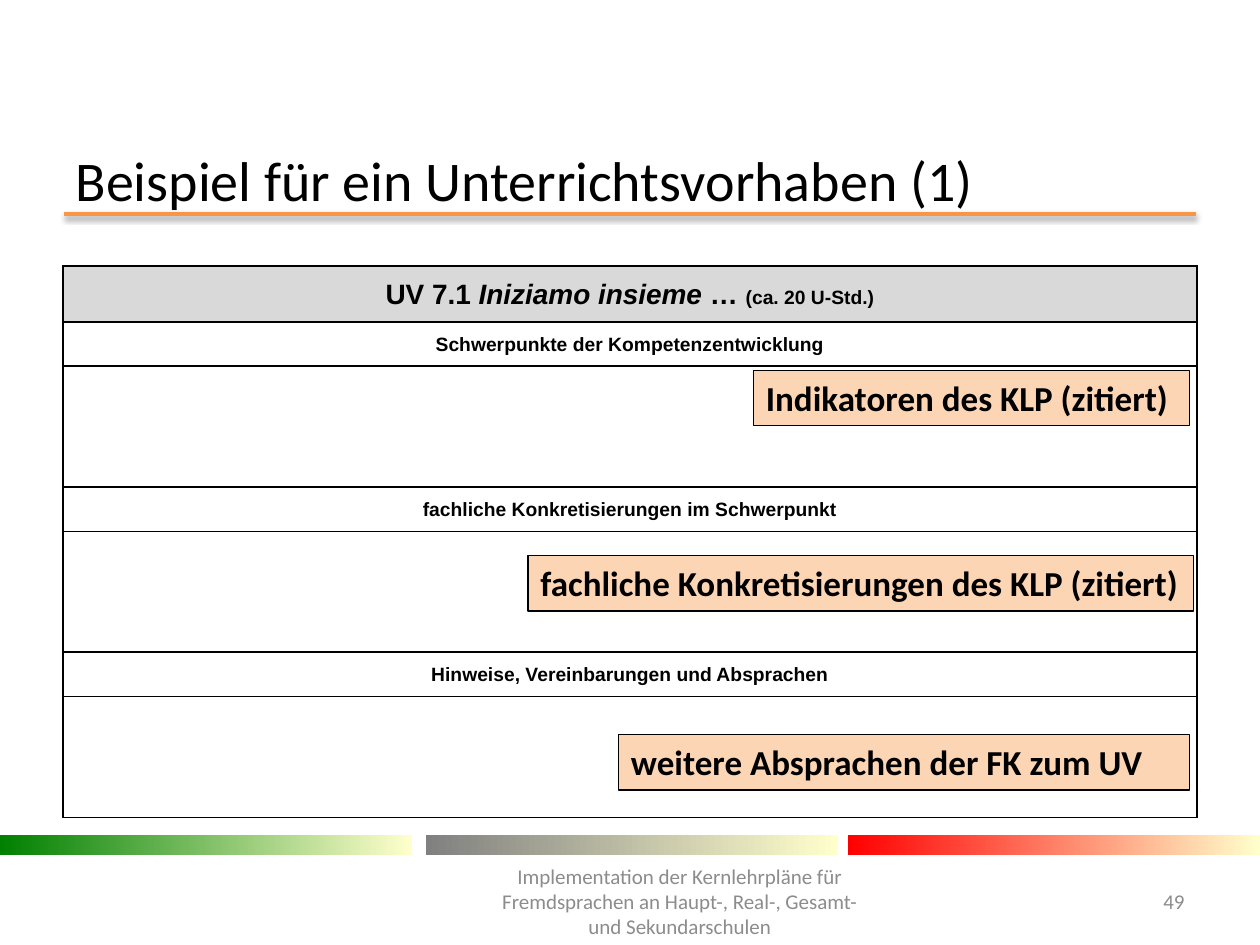
"""Build the slide with the example of a teaching unit."""
from dataclasses import dataclass

from lxml.etree import SubElement
from pptx import Presentation
from pptx.dml.color import RGBColor
from pptx.enum.shapes import MSO_CONNECTOR, MSO_SHAPE
from pptx.enum.text import MSO_ANCHOR, PP_ALIGN
from pptx.oxml import parse_xml
from pptx.oxml.ns import nsdecls, qn
from pptx.util import Inches, Pt


@dataclass(frozen=True)
class Theme:
    heading_font: str = "Calibri"
    table_font: str = "Arial"
    black: str = "000000"
    white: str = "FFFFFF"
    gray: str = "8C8C8C"
    accent: str = "F79646"
    header_fill: str = "D9D9D9"
    label_fill: str = "FCD5B5"
    cream: str = "FFFFCC"
    bar_colors: tuple = ("008000", "808080", "FF0000")
    title_size: int = 32
    label_size: int = 20
    header_size: int = 16
    footer_size: int = 12
    small_size: int = 11


theme = Theme()


def add_run(paragraph, text, font, size, color, bold=False, italic=False):
    run = paragraph.add_run()
    run.text = text
    run.font.name = font
    run.font.size = Pt(size)
    run.font.bold = bold
    run.font.italic = italic
    run.font.color.rgb = RGBColor.from_string(color)


def add_cell_borders(cell, color):
    properties = cell._tc.get_or_add_tcPr()
    for side in ("lnL", "lnR", "lnT", "lnB"):
        properties.append(parse_xml(
            f'<a:{side} {nsdecls("a")} w="12700"><a:solidFill>'
            f'<a:srgbClr val="{color}"/></a:solidFill></a:{side}>'))


presentation = Presentation()
presentation.slide_width = Inches(10)
presentation.slide_height = Inches(7.5)
slide = presentation.slides.add_slide(presentation.slide_layouts[5])

title = slide.shapes.title
title.left, title.top = Inches(0.5), Inches(1.23)
title.width, title.height = Inches(9), Inches(0.39)
title.text_frame.vertical_anchor = MSO_ANCHOR.MIDDLE
paragraph = title.text_frame.paragraphs[0]
paragraph.alignment = PP_ALIGN.LEFT
add_run(paragraph, "Beispiel für ein Unterrichtsvorhaben (1)",
        theme.heading_font, theme.title_size, theme.black)

title_rule = slide.shapes.add_connector(
    MSO_CONNECTOR.STRAIGHT, Inches(0.51), Inches(1.7), Inches(9.49), Inches(1.7))
title_rule.line.color.rgb = RGBColor.from_string(theme.accent)
title_rule.line.width = Pt(2)
effects = SubElement(title_rule._element.spPr, qn("a:effectLst"))
shadow = SubElement(effects, qn("a:outerShdw"), blurRad=str(Pt(3.1)),
                    dist=str(Pt(1.6)), dir="5400000", rotWithShape="0")
shadow_color = SubElement(shadow, qn("a:srgbClr"), val=theme.black)
SubElement(shadow_color, qn("a:alpha"), val="38000")

for left, color in zip((0, 3.38, 6.73), theme.bar_colors):
    bar = slide.shapes.add_shape(
        MSO_SHAPE.RECTANGLE, Inches(left), Inches(6.63), Inches(3.27), Inches(0.16))
    bar.shadow.inherit = False
    bar.line.fill.background()
    bar.fill.gradient()
    bar.fill.gradient_angle = 0
    for stop, stop_color in zip(bar.fill.gradient_stops, (color, theme.cream)):
        stop.color.rgb = RGBColor.from_string(stop_color)

footers = (
    ("49", 8.86, 0.64, PP_ALIGN.RIGHT),
    ("Implementation der Kernlehrpläne für Fremdsprachen an Haupt-, Real-, "
     "Gesamt- und Sekundarschulen", 3.82, 3.15, PP_ALIGN.CENTER),
)
for text, left, width, alignment in footers:
    footer = slide.shapes.add_textbox(
        Inches(left), Inches(6.95), Inches(width), Inches(0.4))
    footer.text_frame.word_wrap = True
    footer.text_frame.vertical_anchor = MSO_ANCHOR.MIDDLE
    paragraph = footer.text_frame.paragraphs[0]
    paragraph.alignment = alignment
    add_run(paragraph, text, theme.heading_font, theme.footer_size, theme.gray)

table_rows = (
    (0.44, (("UV 7.1 ", theme.header_size, False),
            ("Iniziamo insieme ", theme.header_size, True),
            ("… ", theme.header_size, False),
            ("(ca. 20 U-Std.)", theme.small_size, False))),
    (0.34, (("Schwerpunkte der Kompetenzentwicklung", theme.small_size, False),)),
    (0.96, ()),
    (0.34, (("fachliche Konkretisierungen im Schwerpunkt", theme.small_size, False),)),
    (0.96, ()),
    (0.34, (("Hinweise, Vereinbarungen und Absprachen", theme.small_size, False),)),
    (0.96, ()),
)
table = slide.shapes.add_table(
    len(table_rows), 1, Inches(0.5), Inches(2.11), Inches(9), Inches(4.34)).table
for index, (height, runs) in enumerate(table_rows):
    table.rows[index].height = Inches(height)
    cell = table.cell(index, 0)
    add_cell_borders(cell, theme.black)
    cell.fill.solid()
    cell.fill.fore_color.rgb = RGBColor.from_string(
        theme.white if index else theme.header_fill)
    cell.margin_left = cell.margin_right = Inches(0.07)
    cell.margin_top = cell.margin_bottom = Inches(0.07)
    paragraph = cell.text_frame.paragraphs[0]
    paragraph.alignment = PP_ALIGN.CENTER
    paragraph.line_spacing = 1.15
    for text, size, italic in runs:
        add_run(paragraph, text, theme.table_font, size, theme.black, True, italic)

labels = (
    ("Indikatoren des KLP (zitiert)", 5.98, 2.94, 3.46),
    ("fachliche Konkretisierungen des KLP (zitiert)", 4.19, 4.41, 5.28),
    ("weitere Absprachen der FK zum UV", 4.91, 5.83, 4.53),
)
for text, left, top, width in labels:
    label = slide.shapes.add_shape(
        MSO_SHAPE.RECTANGLE, Inches(left), Inches(top), Inches(width), Inches(0.44))
    label.shadow.inherit = False
    label.fill.solid()
    label.fill.fore_color.rgb = RGBColor.from_string(theme.label_fill)
    label.line.color.rgb = RGBColor.from_string(theme.black)
    label.line.width = Pt(0.75)
    label.text_frame.word_wrap = True
    label.text_frame.vertical_anchor = MSO_ANCHOR.TOP
    paragraph = label.text_frame.paragraphs[0]
    paragraph.alignment = PP_ALIGN.LEFT
    add_run(paragraph, text, theme.heading_font, theme.label_size, theme.black, True)

presentation.save("out.pptx")
